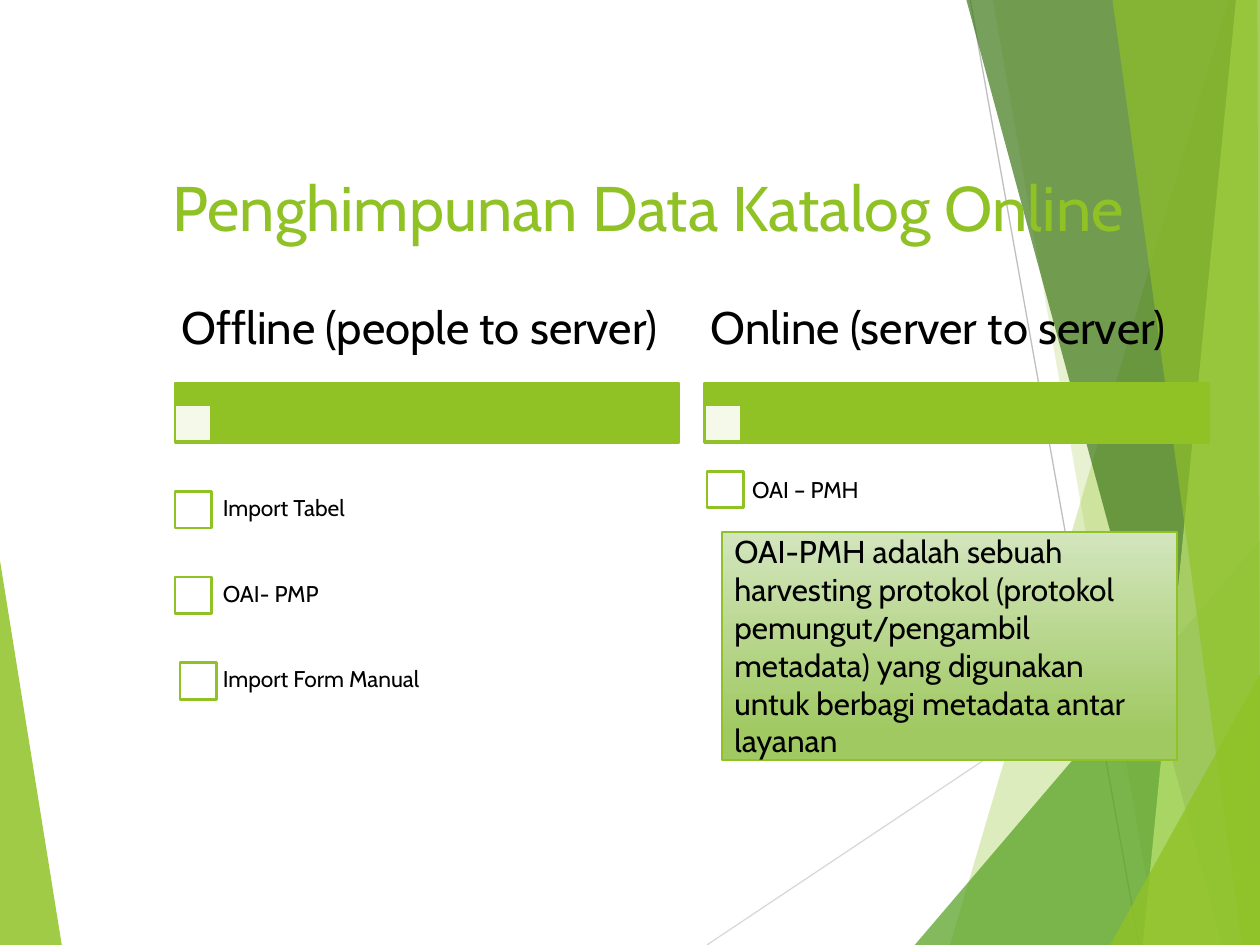
from dataclasses import dataclass

from lxml.etree import SubElement
from pptx import Presentation
from pptx.dml.color import RGBColor
from pptx.enum.shapes import MSO_CONNECTOR, MSO_SHAPE
from pptx.enum.text import MSO_ANCHOR, PP_ALIGN
from pptx.oxml.ns import qn
from pptx.util import Inches, Pt


@dataclass(frozen=True)
class Theme:
    font: str = "Cabin"
    lime: str = "90C226"
    green: str = "54A021"
    forest: str = "3F7819"
    pale: str = "C0E474"
    white: str = "FFFFFF"
    black: str = "000000"
    ray_light: str = "D9D9D9"
    ray_dark: str = "BFBFBF"
    note_top: str = "D3E5BE"
    note_bottom: str = "A0C962"
    title: int = 36
    heading: int = 26
    body: int = 18
    item: int = 13


@dataclass(frozen=True)
class Facet:
    color: str
    opacity: int
    points: tuple[tuple[float, float], ...]


@dataclass(frozen=True)
class Ray:
    color: str
    start: tuple[float, float]
    end: tuple[float, float]


@dataclass(frozen=True)
class Item:
    label: str
    box_shift: tuple[float, float] = (0, 0)
    anchor: MSO_ANCHOR = MSO_ANCHOR.MIDDLE


@dataclass(frozen=True)
class Column:
    left: float
    heading: str
    items: tuple[Item, ...]


THEME = Theme()
COLUMN_WIDTH = 4
BOX_SIDE = 0.29
LABEL_INDENT = 0.28
ITEM_TOP = 3.7
ITEM_PITCH = 0.68
ITEM_HEIGHT = 0.68

LEFT_FACET = Facet(THEME.lime, 85, ((0, 4.45), (0.49, 7.5), (0, 7.5)))
RAYS = (
    Ray(THEME.ray_light, (5.61, 7.5), (10, 4.57)),
    Ray(THEME.ray_dark, (7.7, 0), (9.04, 7.5)),
)
RIGHT_FACETS = (
    Facet(THEME.lime, 30, ((9.75, 0), (7.54, 7.5), (10, 7.5), (10, 0))),
    Facet(THEME.lime, 20, ((7.88, 0), (9.19, 7.5), (10, 7.5), (10, 0))),
    Facet(THEME.green, 72, ((7.26, 7.5), (10, 4.29), (10, 7.5))),
    Facet(THEME.forest, 70, ((7.67, 0), (9.7, 7.5), (10, 7.5), (10, 0))),
    Facet(THEME.pale, 70, ((9.81, 0), (9.07, 7.5), (10, 7.5), (10, 0))),
    Facet(THEME.lime, 65, ((8.83, 0), (9.86, 7.5), (10, 7.5), (9.98, 0))),
    Facet(THEME.lime, 80, ((8.81, 7.5), (10, 5.35), (10, 7.5))),
)
COLUMNS = (
    Column(1.39, "Offline (people to server)", (
        Item("Import Tabel"),
        Item("OAI- PMP"),
        Item("Import Form Manual", (0.04, 0)),
    )),
    Column(5.59, "Online (server to server)", (
        Item("OAI – PMH", (0.02, -0.16), MSO_ANCHOR.TOP),
    )),
)
NOTE = (
    "OAI-PMH adalah sebuah harvesting protokol (protokol pemungut/pengambil "
    "metadata) yang digunakan untuk berbagi metadata antar layanan"
)


def fill_solid(shape, color: str, opacity: int = 100) -> None:
    shape.fill.solid()
    shape.fill.fore_color.rgb = RGBColor.from_string(color)
    if opacity < 100:
        tint = shape.fill._xPr.find(qn("a:solidFill")).find(qn("a:srgbClr"))
        SubElement(tint, qn("a:alpha")).set("val", str(opacity * 1000))


def draw_facet(slide, facet: Facet) -> None:
    start, *rest = [(Inches(x), Inches(y)) for x, y in facet.points]
    builder = slide.shapes.build_freeform(*start)
    builder.add_line_segments(rest, close=True)
    shape = builder.convert_to_shape()
    shape.shadow.inherit = False
    fill_solid(shape, facet.color, facet.opacity)
    shape.line.fill.background()


def draw_ray(slide, ray: Ray) -> None:
    ends = [Inches(value) for value in ray.start + ray.end]
    line = slide.shapes.add_connector(MSO_CONNECTOR.STRAIGHT, *ends)
    line.line.color.rgb = RGBColor.from_string(ray.color)
    line.line.width = Pt(0.75)
    SubElement(line._element.spPr, qn("a:effectLst"))


def draw_rect(slide, left: float, top: float, width: float, height: float,
              color: str, opacity: int = 100, border: float = 1.5):
    shape = slide.shapes.add_shape(
        MSO_SHAPE.RECTANGLE, Inches(left), Inches(top), Inches(width), Inches(height))
    shape.shadow.inherit = False
    fill_solid(shape, color, opacity)
    shape.line.color.rgb = RGBColor.from_string(THEME.lime)
    shape.line.width = Pt(border)
    return shape


def write(shape, words: str, size: int, color: str = THEME.black,
          anchor: MSO_ANCHOR = MSO_ANCHOR.MIDDLE,
          inset: tuple[float, float] = (0.1, 0.05), spacing: float = 1) -> None:
    frame = shape.text_frame
    frame.word_wrap = True
    frame.vertical_anchor = anchor
    frame.margin_left = frame.margin_right = Inches(inset[0])
    frame.margin_top = frame.margin_bottom = Inches(inset[1])
    paragraph = frame.paragraphs[0]
    paragraph.alignment = PP_ALIGN.LEFT
    paragraph.line_spacing = spacing
    run = paragraph.add_run()
    run.text = words
    run.font.name = THEME.font
    run.font.size = Pt(size)
    run.font.color.rgb = RGBColor.from_string(color)


def add_text_area(slide, left: float, top: float, width: float, height: float):
    return slide.shapes.add_textbox(
        Inches(left), Inches(top), Inches(width), Inches(height))


def draw_column(slide, column: Column) -> None:
    draw_rect(slide, column.left, 3.04, COLUMN_WIDTH, 0.47, THEME.lime)
    draw_rect(slide, column.left, 3.21, BOX_SIDE, BOX_SIDE, THEME.white, 90)
    heading = add_text_area(slide, column.left, 2.19, COLUMN_WIDTH, 0.85)
    write(heading, column.heading, THEME.heading, inset=(0.05, 0.04), spacing=0.9)
    for index, item in enumerate(column.items):
        top = ITEM_TOP + index * ITEM_PITCH
        shift_x, shift_y = item.box_shift
        draw_rect(slide, column.left + shift_x, top + 0.2 + shift_y,
                  BOX_SIDE, BOX_SIDE, THEME.white)
        label = add_text_area(slide, column.left + LABEL_INDENT, top,
                              COLUMN_WIDTH - LABEL_INDENT, ITEM_HEIGHT)
        write(label, item.label, THEME.item, anchor=item.anchor,
              inset=(0.1, 0.1), spacing=0.9)


def draw_note(slide) -> None:
    note = draw_rect(slide, 5.73, 4.22, 3.61, 1.81, THEME.note_top, border=1)
    note.fill.gradient()
    note.fill.gradient_angle = 270
    stops = ((0, THEME.note_top), (0.88, THEME.note_bottom))
    for stop, (position, color) in zip(note.fill.gradient_stops, stops):
        stop.position = position
        stop.color.rgb = RGBColor.from_string(color)
    write(note, NOTE, THEME.body)


def main() -> None:
    deck = Presentation()
    deck.slide_width, deck.slide_height = Inches(10), Inches(7.5)
    slide = deck.slides.add_slide(deck.slide_layouts[6])
    draw_facet(slide, LEFT_FACET)
    for ray in RAYS:
        draw_ray(slide, ray)
    for facet in RIGHT_FACETS:
        draw_facet(slide, facet)
    title = add_text_area(slide, 1.27, 1.29, 8.22, 1.46)
    write(title, "Penghimpunan Data Katalog Online", THEME.title, THEME.lime,
          MSO_ANCHOR.TOP)
    for column in COLUMNS:
        draw_column(slide, column)
    draw_note(slide)
    deck.save("out.pptx")


if __name__ == "__main__":
    main()
